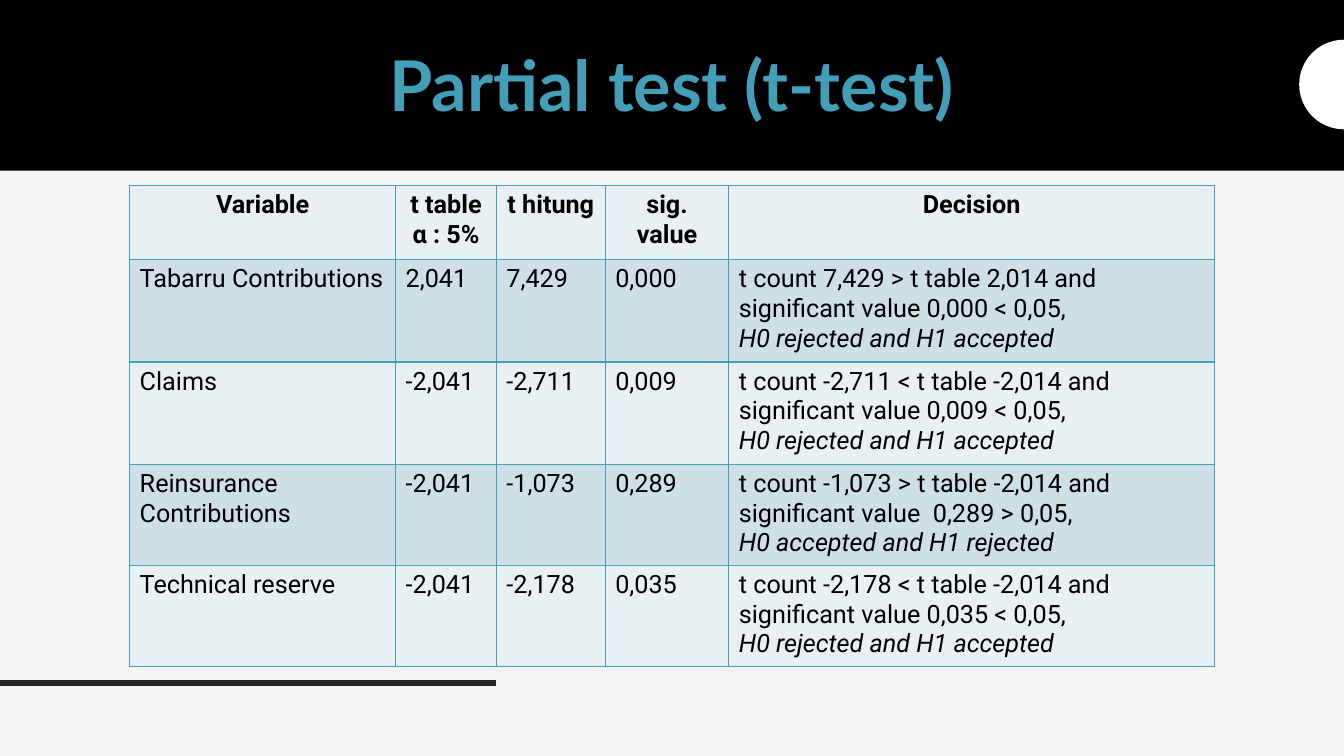
from math import cos, pi, sin

from lxml.etree import SubElement
from pptx import Presentation
from pptx.dml.color import RGBColor
from pptx.enum.shapes import MSO_CONNECTOR, MSO_SHAPE
from pptx.enum.text import MSO_ANCHOR, PP_ALIGN
from pptx.oxml.ns import qn
from pptx.util import Pt

WIDTH, HEIGHT = 960, 540
BLACK, WHITE, DARK, PAPER = "000000", "FFFFFF", "262626", "F5F5F5"
TEAL, LIGHT_ROW, TINTED_ROW = "439EB7", "E9F0F3", "CFDFE6"

COLUMN_WIDTHS = [190, 72, 77.7, 88.3, 347]
ROW_HEIGHTS = [53, 73.2, 73.2, 70.7, 70.7]
HEADERS = ["Variable", "t table α : 5%", "t hitung", "sig. value", "Decision"]
RESULTS = [
    ["Tabarru Contributions", "2,041", "7,429", "0,000",
     "t count 7,429 > t table 2,014 and significant value 0,000 < 0,05,\n"
     "H0 rejected and H1 accepted"],
    ["Claims", "-2,041", "-2,711", "0,009",
     "t count -2,711 < t table -2,014 and significant value 0,009 < 0,05,\n"
     "H0 rejected and H1 accepted"],
    ["Reinsurance Contributions", "-2,041", "-1,073", "0,289",
     "t count -1,073 > t table -2,014 and significant value  0,289 > 0,05,\n"
     "H0 accepted and H1 rejected"],
    ["Technical reserve", "-2,041", "-2,178", "0,035",
     "t count -2,178 < t table -2,014 and significant value 0,035 < 0,05,\n"
     "H0 rejected and H1 accepted"],
]


def rgb(color):
    return RGBColor.from_string(color)


def paint(sp, color):
    """Fill a shape with one colour, without outline or shadow."""
    sp.shadow.inherit = False
    sp.fill.solid()
    sp.fill.fore_color.rgb = rgb(color)
    sp.line.fill.background()


def format_runs(p, font, size, color, bold=False, italic=False):
    for r in p.runs:
        r.font.name = font
        r.font.size = Pt(size)
        r.font.color.rgb = rgb(color)
        r.font.bold = bold
        r.font.italic = italic


def add_band(s, height):
    sp = s.shapes.add_shape(MSO_SHAPE.RECTANGLE, 0, 0, Pt(WIDTH), Pt(height))
    paint(sp, BLACK)


def add_half_disc(s, center_y, radius, steps=36):
    """Draw a half disc whose flat side lies on the right slide edge."""
    angles = [pi * i / steps for i in range(steps + 1)]
    points = [(Pt(WIDTH - radius * sin(a)), Pt(center_y - radius * cos(a)))
              for a in angles]
    builder = s.shapes.build_freeform(*points[0])
    builder.add_line_segments(points[1:], close=True)
    paint(builder.convert_to_shape(), WHITE)


def add_rule(s, y, length):
    line = s.shapes.add_connector(
        MSO_CONNECTOR.STRAIGHT, 0, Pt(y), Pt(length), Pt(y))
    line.line.color.rgb = rgb(DARK)
    line.line.width = Pt(4.5)
    SubElement(line._element.spPr, qn("a:effectLst"))


def add_title(s, text):
    tf = s.shapes.add_textbox(Pt(60), Pt(24), Pt(840), Pt(79)).text_frame
    tf.word_wrap = True
    tf.vertical_anchor = MSO_ANCHOR.MIDDLE
    p = tf.paragraphs[0]
    p.text = text
    p.alignment = PP_ALIGN.CENTER
    p.line_spacing = 0.9
    format_runs(p, "Lato", 50, TEAL, bold=True)


def set_borders(cell, color, width):
    tc_pr = cell._tc.get_or_add_tcPr()
    for position, side in enumerate(("a:lnL", "a:lnR", "a:lnT", "a:lnB")):
        ln = tc_pr.makeelement(qn(side), {"w": str(Pt(width))})
        fill = SubElement(ln, qn("a:solidFill"))
        SubElement(fill, qn("a:srgbClr"), val=color)
        tc_pr.insert(position, ln)


def fill_cell(cell, text, color, header):
    cell.fill.solid()
    cell.fill.fore_color.rgb = rgb(color)
    set_borders(cell, TEAL, 1)
    cell.text_frame.text = text
    for i, p in enumerate(cell.text_frame.paragraphs):
        p.alignment = PP_ALIGN.CENTER if header else PP_ALIGN.LEFT
        format_runs(p, "Roboto", 18, BLACK, bold=header, italic=i > 0)


def add_results_table(s, left, top):
    rows = [HEADERS] + RESULTS
    table = s.shapes.add_table(
        len(rows), len(HEADERS), Pt(left), Pt(top),
        Pt(sum(COLUMN_WIDTHS)), Pt(sum(ROW_HEIGHTS))).table
    table.first_row = False
    table.horz_banding = False
    for column, width in zip(table.columns, COLUMN_WIDTHS):
        column.width = Pt(width)
    for i, (row, height) in enumerate(zip(table.rows, ROW_HEIGHTS)):
        row.height = Pt(height)
        color = TINTED_ROW if i % 2 else LIGHT_ROW
        for cell, text in zip(row.cells, rows[i]):
            fill_cell(cell, text, color, header=i == 0)


def main():
    prs = Presentation()
    prs.slide_width, prs.slide_height = Pt(WIDTH), Pt(HEIGHT)
    s = prs.slides.add_slide(prs.slide_layouts[6])
    s.background.fill.solid()
    s.background.fill.fore_color.rgb = rgb(PAPER)
    add_rule(s, 488, 354)
    add_band(s, 122)
    add_half_disc(s, 60.4, 32)
    add_title(s, "Partial test (t-test)")
    add_results_table(s, 92.6, 132.4)
    prs.save("out.pptx")


if __name__ == "__main__":
    main()
